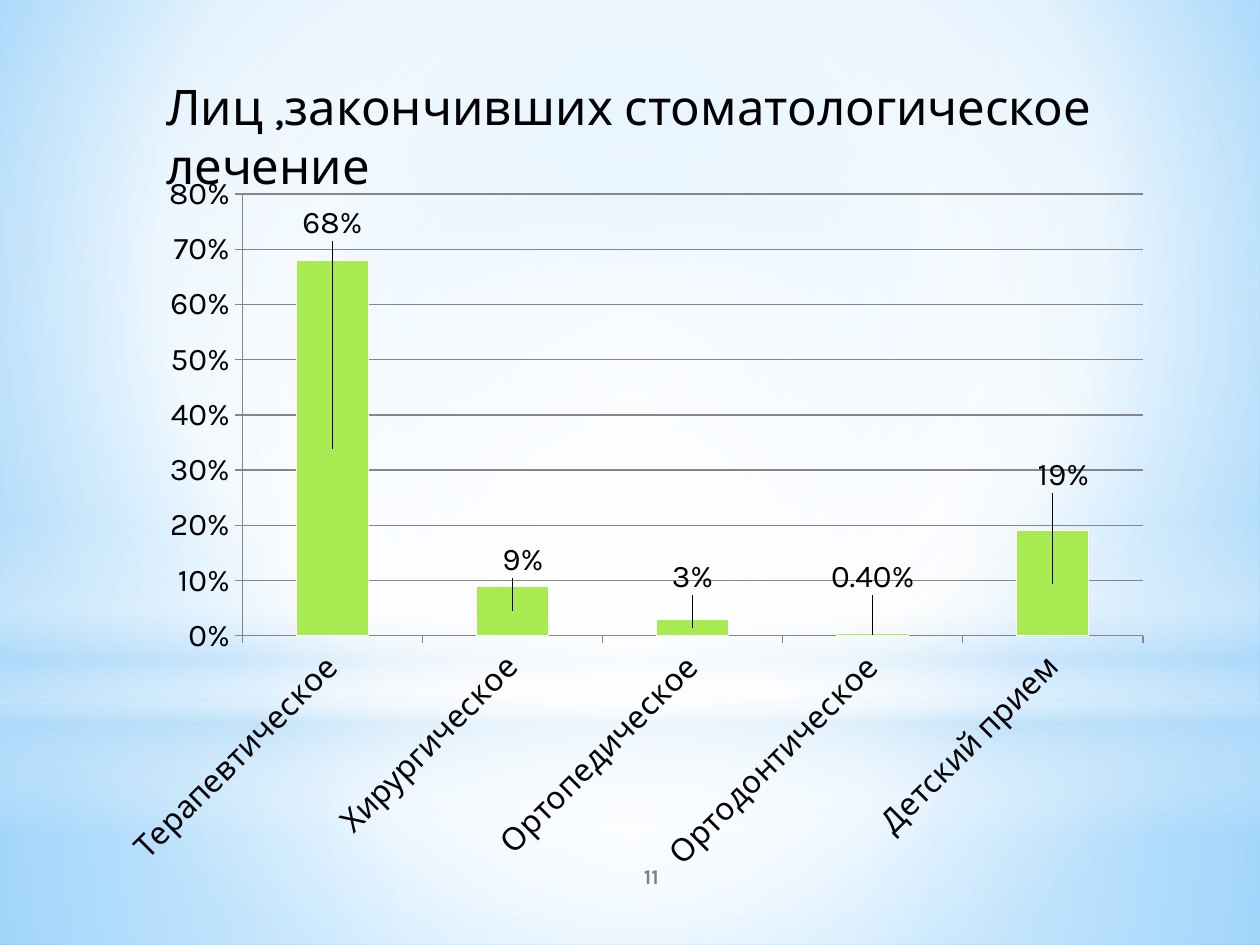
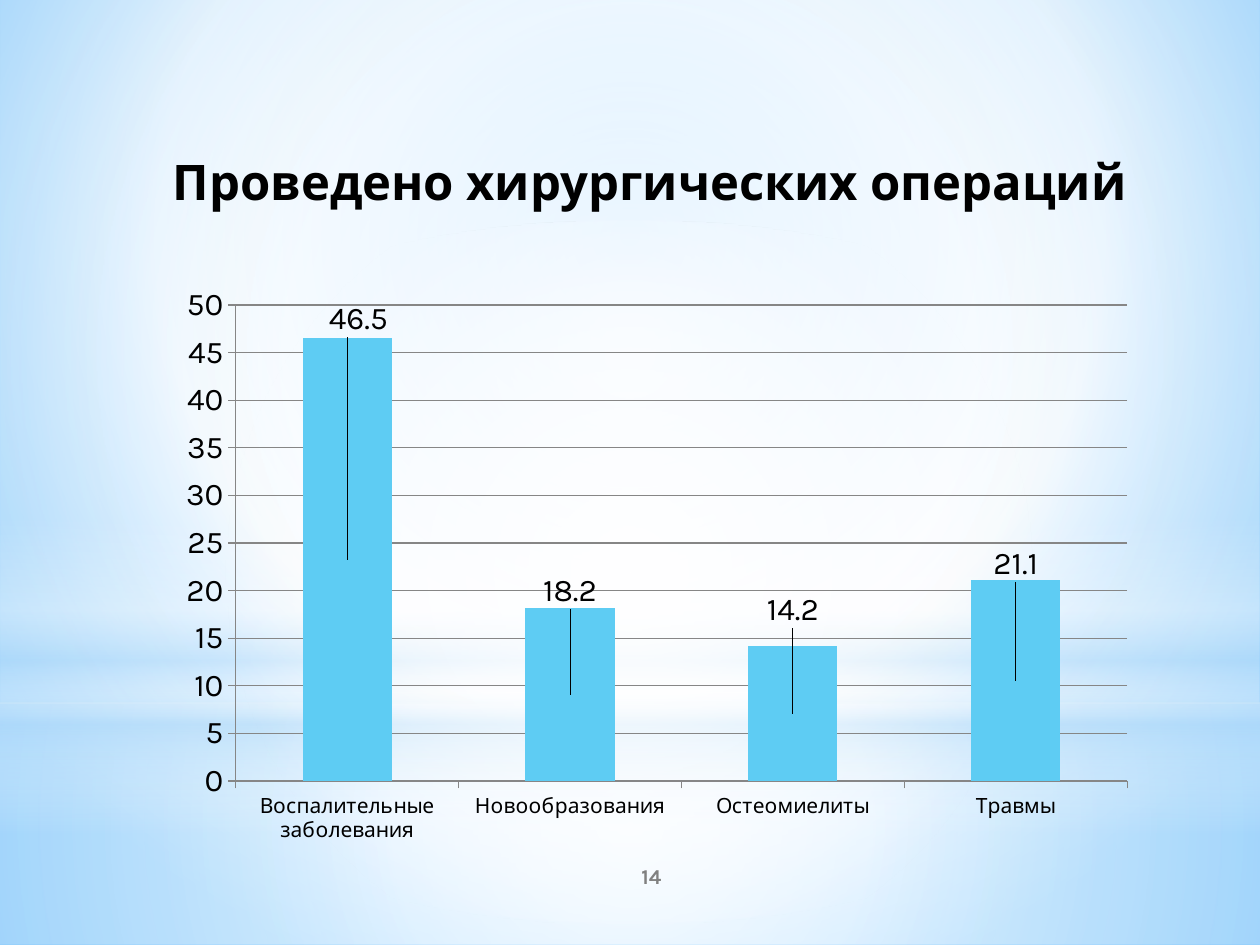
from lxml import etree
from pptx import Presentation
from pptx.chart.data import CategoryChartData
from pptx.dml.color import RGBColor
from pptx.enum.chart import XL_CHART_TYPE as ChartType
from pptx.enum.chart import XL_LABEL_POSITION as LabelPosition
from pptx.enum.chart import XL_TICK_MARK as TickMark
from pptx.enum.shapes import MSO_SHAPE as Shape
from pptx.enum.text import MSO_ANCHOR as Anchor
from pptx.enum.text import PP_ALIGN as Align
from pptx.oxml import parse_xml
from pptx.oxml.ns import nsdecls, qn
from pptx.util import Inches, Pt

FONT = "Karla"
BLACK = RGBColor(0x00, 0x00, 0x00)
WHITE = RGBColor(0xFF, 0xFF, 0xFF)
GREY = RGBColor(0x80, 0x80, 0x80)
AXIS_GREY = RGBColor(0x86, 0x86, 0x86)
GREEN = RGBColor(0xA7, 0xEA, 0x52)
SKY = RGBColor(0x5E, 0xCC, 0xF3)
PALE_BLUE = RGBColor(0xB4, 0xDC, 0xFA)
LIGHT_BLUE = RGBColor(0x9E, 0xD5, 0xFF)
DEEP_BLUE = RGBColor(0x5B, 0xB9, 0xFF)

# Gradient stops: position, colour, opacity (percent)
BACKDROP = dict(stops=[(0, LIGHT_BLUE, 100), (60, WHITE, 100), (100, DEEP_BLUE, 100)],
                focus=(20, 10, 20, 60))
CENTRE = (50, 50, 50, 50)
BANDS = [
    (Shape.RECTANGLE, (0, 5.58, 10, 1.92), dict(
        stops=[(0, WHITE, 91), (37, WHITE, 76), (100, PALE_BLUE, 79)], focus=CENTRE)),
    (Shape.RECTANGLE, (0, 0, 10, 5.58), dict(
        stops=[(0, WHITE, 89), (48, WHITE, 62), (100, PALE_BLUE, 79)], focus=CENTRE)),
    (Shape.RECTANGLE, (0, 4.12, 10, 2.5), dict(
        stops=[(0, WHITE, 0), (29, WHITE, 30), (45, PALE_BLUE, 40),
               (55, WHITE, 26), (65, PALE_BLUE, 60), (100, WHITE, 0)], angle=90)),
    (Shape.OVAL, (0, 1.75, 10, 5.58), dict(
        stops=[(0, WHITE, 100), (56, WHITE, 0)], focus=CENTRE)),
]
NUMBER_BOX = (4.17, 6.75, 2, 0.4)

# Bars: category, value, label shift as a share of the chart, own label format
SLIDES = [
    dict(
        number="11",
        title="Лиц ,закончивших стоматологическое лечение",
        title_box=(1.22, 0.56, 8.02, 0.88),
        title_format=dict(align=Align.LEFT, bold=False),
        chart_box=(0.83, 1.31, 8.41, 5.75),
        plot_area=(0.13, 0.04, 0.85, 0.61),
        bars=[
            ("Терапевтическое", 0.68, (0, -0.31), None),
            ("Хирургическое", 0.09, (0.01, -0.07), None),
            ("Ортопедическое", 0.03, (0, -0.07), None),
            ("Ортодонтическое", 0.004, (0, -0.08), "0.00%"),
            ("Детский прием", 0.19, (0.01, -0.15), None),
        ],
        color=GREEN, outline=WHITE, value_format="0%",
        maximum=0.8, step=0.1, category_size=18, category_angle=-45,
    ),
    dict(
        number="14",
        title="Проведено хирургических операций",
        title_box=(1.14, 1.15, 8.03, 0.88),
        title_format=dict(align=Align.CENTER, bold=True),
        chart_box=(0.75, 1.55, 8.9, 5.45),
        plot_area=(0.126, 0.16, 0.795, 0.693),
        bars=[
            ("Воспалительные заболевания", 46.5, (0.01, -0.35), None),
            ("Новообразования", 18.2, (0, -0.15), None),
            ("Остеомиелиты", 14.2, (0, -0.15), None),
            ("Травмы", 21.1, (0, -0.17), None),
        ],
        color=SKY, outline=None, value_format="General",
        maximum=50, step=5, category_size=12, category_angle=0,
    ),
]


def apply_format(target, values):
    for key, value in values.items():
        setattr(target, key, value)


def inches(box):
    return [Inches(length) for length in box]


def fill_gradient(owner, fill, stops, focus=None, angle=0):
    """Replace the default gradient of a shape or background."""
    fill.gradient()
    default = owner.element.find(".//" + qn("a:gradFill"))
    gradient = parse_xml(f'<a:gradFill {nsdecls("a")} rotWithShape="1"><a:gsLst/></a:gradFill>')
    for position, color, opacity in stops:
        stop = etree.SubElement(gradient[0], qn("a:gs"), pos=str(position * 1000))
        tint = etree.SubElement(stop, qn("a:srgbClr"), val=str(color))
        if opacity < 100:
            etree.SubElement(tint, qn("a:alpha"), val=str(opacity * 1000))
    if focus:
        circle = etree.SubElement(gradient, qn("a:path"), {"path": "circle"})
        sides = {side: str(share * 1000) for side, share in zip("ltrb", focus)}
        etree.SubElement(circle, qn("a:fillToRect"), sides)
    else:
        etree.SubElement(gradient, qn("a:lin"), ang=str(angle * 60000), scaled="0")
    default.getparent().replace(default, gradient)


def add_bands(slide):
    for outline, box, gradient in BANDS:
        band = slide.shapes.add_shape(outline, *inches(box))
        band.shadow.inherit = False
        band.line.fill.background()
        fill_gradient(band, band.fill, **gradient)


def add_text(slide, box, text, size, color, align, bold, anchor=Anchor.TOP):
    frame = slide.shapes.add_textbox(*inches(box)).text_frame
    apply_format(frame, dict(word_wrap=True, vertical_anchor=anchor))
    line = frame.paragraphs[0]
    line.alignment = align
    run = line.add_run()
    run.text = text
    apply_format(run.font, dict(name=FONT, size=Pt(size), bold=bold))
    run.font.color.rgb = color


def manual_layout(x, y, size=None):
    """Place a plot area by its inner box, or shift a label."""
    parts = []
    if size:
        parts += [("layoutTarget", "inner"), ("xMode", "edge"), ("yMode", "edge")]
    parts += [("x", x), ("y", y)]
    if size:
        parts += zip("wh", size)
    layout = parse_xml(f'<c:layout {nsdecls("c")}><c:manualLayout/></c:layout>')
    for tag, value in parts:
        etree.SubElement(layout[0], qn("c:" + tag), val=str(value))
    return layout


def label_bars(series, bars, value_format):
    for index, (_, _, shift, own_format) in enumerate(bars):
        series.points[index].data_label.position = LabelPosition.CENTER
        label = series._element.findall(".//" + qn("c:dLbl"))[index]
        label.insert(1, manual_layout(*shift))
        label.insert(2, parse_xml(
            f'<c:numFmt {nsdecls("c")} formatCode="{own_format or value_format}" sourceLinked="0"/>'))
    apply_format(series.data_labels, dict(
        show_value=True, number_format=value_format, number_format_is_linked=False))


def add_bar_chart(slide, page):
    data = CategoryChartData(number_format=page["value_format"])
    data.categories = [bar[0] for bar in page["bars"]]
    data.add_series("Series 1", [bar[1] for bar in page["bars"]])
    chart = slide.shapes.add_chart(
        ChartType.COLUMN_STACKED, *inches(page["chart_box"]), data).chart
    apply_format(chart, dict(has_legend=False, has_title=False))
    apply_format(chart.font, dict(name=FONT, size=Pt(18)))
    chart.font.color.rgb = BLACK

    plot = chart.plots[0]
    apply_format(plot, dict(gap_width=150, overlap=100, vary_by_categories=False))
    x, y, *size = page["plot_area"]
    plot_area = chart._chartSpace.find(".//" + qn("c:plotArea"))
    for automatic in plot_area.findall(qn("c:layout")):
        plot_area.remove(automatic)
    plot_area.insert(0, manual_layout(x, y, size))

    # Bars and their labels
    series = plot.series[0]
    series.format.fill.solid()
    series.format.fill.fore_color.rgb = page["color"]
    if page["outline"] is not None:
        series.format.line.color.rgb = page["outline"]
    label_bars(series, page["bars"], page["value_format"])

    # Axes and grid
    values, categories = chart.value_axis, chart.category_axis
    apply_format(values, dict(minimum_scale=0, maximum_scale=page["maximum"],
                              major_unit=page["step"], has_major_gridlines=True))
    apply_format(values.tick_labels, dict(
        number_format=page["value_format"], number_format_is_linked=False))
    for axis in (values, categories):
        apply_format(axis, dict(major_tick_mark=TickMark.OUTSIDE, minor_tick_mark=TickMark.NONE))
    for part in (values, categories, values.major_gridlines):
        part.format.line.color.rgb = AXIS_GREY
        part.format.line.width = Pt(0.75)
    apply_format(categories.tick_labels.font, dict(name=FONT, size=Pt(page["category_size"])))
    categories.tick_labels.font.color.rgb = BLACK
    if page["category_angle"]:
        body = categories._element.find(".//" + qn("a:bodyPr"))
        body.set("rot", str(page["category_angle"] * 60000))


def main():
    deck = Presentation()
    apply_format(deck, dict(slide_width=Inches(10), slide_height=Inches(7.5)))
    master = deck.slide_master
    fill_gradient(master, master.background.fill, **BACKDROP)
    for page in SLIDES:
        slide = deck.slides.add_slide(deck.slide_layouts[6])
        add_bands(slide)
        add_text(slide, NUMBER_BOX, page["number"], 12, GREY, Align.CENTER, True, Anchor.MIDDLE)
        add_bar_chart(slide, page)
        add_text(slide, page["title_box"], page["title"], 28, BLACK, **page["title_format"])
    deck.save("out.pptx")


if __name__ == "__main__":
    main()
